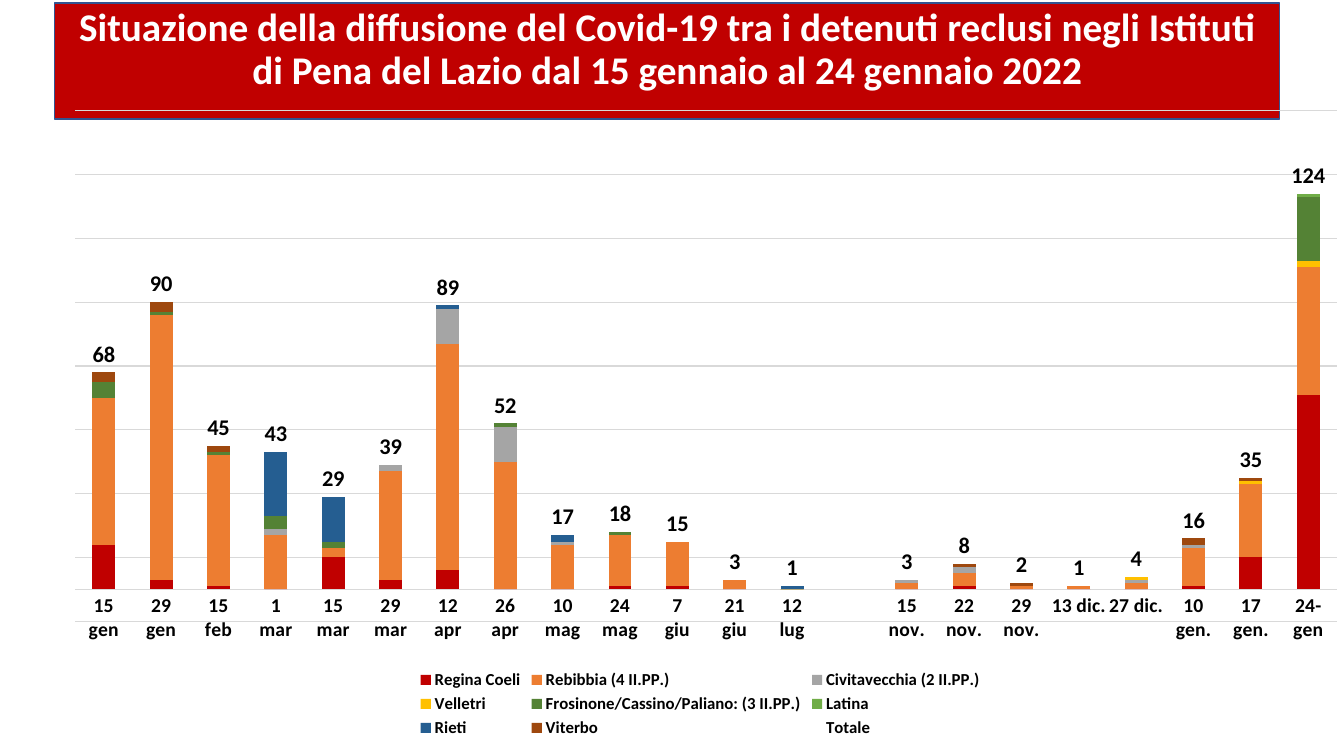
from lxml import etree
from pptx import Presentation
from pptx.chart.data import CategoryChartData
from pptx.dml.color import RGBColor
from pptx.enum.chart import (XL_CHART_TYPE, XL_LABEL_POSITION,
                             XL_LEGEND_POSITION, XL_TICK_MARK)
from pptx.enum.shapes import MSO_SHAPE
from pptx.enum.text import MSO_ANCHOR, PP_ALIGN
from pptx.oxml.ns import qn
from pptx.util import Inches, Pt

STACKED = XL_CHART_TYPE.COLUMN_STACKED
BASE = XL_LABEL_POSITION.INSIDE_BASE
BOTTOM = XL_LEGEND_POSITION.BOTTOM
NO_TICK = XL_TICK_MARK.NONE
RECT = MSO_SHAPE.RECTANGLE
TOP = MSO_ANCHOR.TOP
CENTER = PP_ALIGN.CENTER

FONT = "Calibri"
RED, BLACK, WHITE, GRAY = "C00000", "000000", "FFFFFF", "D9D9D9"
TITLE = ("Situazione della diffusione del Covid-19 tra i detenuti reclusi negli "
         "Istituti di Pena del Lazio dal 15 gennaio al 24 gennaio 2022")
TITLE_BOX = (0.54, 0.03, 12.15, 1.15)
CHART_BOX = (0.54, 0.97, 12.81, 6.39)
PLOT = {"x": 0.016, "y": 0.02, "w": 0.977, "h": 0.793}

DATES = ["15\ngen", "29\ngen", "15\nfeb", "1\nmar", "15\nmar", "29\nmar",
         "12\napr", "26\napr", "10\nmag", "24\nmag", "7\ngiu", "21\ngiu",
         "12\nlug", "", "15 nov.", "22 nov.", "29 nov.", "13 dic.",
         "27 dic.", "10 gen.", "17 gen.", "24-gen"]
TOTAL = "Totale"
SERIES = [
    ("Regina Coeli", RED,
     [14, 3, 1, 0, 10, 3, 6, 0, 0, 1, 1, 0, 0, None, 0, 1, 0, 0, 0, 1, 10, 61]),
    ("Rebibbia (4 II.PP.)", "ED7D31",
     [46, 83, 41, 17, 3, 34, 71, 40, 14, 16, 14, 3, 0, None, 2, 4, 1, 1, 2, 12, 23, 40]),
    ("Civitavecchia (2 II.PP.)", "A5A5A5",
     [0, 0, 0, 2, 0, 2, 11, 11, 1, 0, 0, 0, 0, None, 1, 2, 0, None, 1, 1, 0, 0]),
    ("Velletri", "FFC000",
     [0, 0, 0, 0, 0, 0, 0, 0, 0, 0, 0, 0, 0, None, 0, 0, 0, 0, 1, 0, 1, 2]),
    ("Frosinone/Cassino/Paliano: (3 II.PP.)", "548235",
     [5, 1, 1, 4, 2, 0, 0, 1, 0, 1, 0, 0, 0, None, 0, 0, 0, 0, 0, 0, 0, 20]),
    ("Latina", "70AD47",
     [0, 0, 0, 0, 0, 0, 0, 0, 0, 0, 0, 0, 0, None, 0, 0, 0, 0, 0, 0, 0, 1]),
    ("Rieti", "255E91",
     [0, 0, 0, 20, 14, 0, 1, 0, 2, 0, 0, 0, 1, None, 0, 0, 0, 0, 0, 0, 0, 0]),
    ("Viterbo", "9E480E",
     [3, 3, 2, 0, 0, 0, 0, 0, 0, 0, 0, 0, 0, None, 0, 1, 1, 0, 0, 2, 1, 0]),
    (TOTAL, None,
     [68, 90, 45, 43, 29, 39, 89, 52, 17, 18, 15, 3, 1, None, 3, 8, 2, 1, 4, 16, 35, 124]),
]


def color(code):
    return RGBColor.from_string(code)


def style(font, size, code=BLACK, bold=True):
    font.name, font.size, font.bold = FONT, Pt(size), bold
    font.color.rgb = color(code)


def stroke(line, code, width):
    line.color.rgb = color(code)
    line.width = Pt(width)


def write(shape, text, size, code, align, anchor, spacing):
    frame = shape.text_frame
    frame.word_wrap = True
    frame.vertical_anchor = anchor
    para = frame.paragraphs[0]
    para.alignment = align
    para.line_spacing = spacing
    para.space_before = Pt(10)
    run = para.add_run()
    run.text = text
    style(run.font, size, code)


def place(plot):
    """Fix the inner plot area at the fractions in PLOT."""
    area = plot._element.getparent()
    for old in area.findall(qn("c:layout")):
        area.remove(old)
    layout = etree.Element(qn("c:layout"))
    manual = etree.SubElement(layout, qn("c:manualLayout"))
    rules = {"layoutTarget": "inner", "xMode": "edge", "yMode": "edge", **PLOT}
    for tag, val in rules.items():
        etree.SubElement(manual, qn("c:" + tag)).set("val", str(val))
    area.insert(0, layout)


def add_title(slide):
    box = slide.shapes.add_shape(RECT, *map(Inches, TITLE_BOX))
    box.shadow.inherit = False
    box.fill.solid()
    box.fill.fore_color.rgb = color(RED)
    stroke(box.line, "325491", 1)
    write(box, TITLE, size=28, code=WHITE, align=CENTER, anchor=TOP, spacing=0.9)


def add_cases(slide):
    data = CategoryChartData()
    data.categories = DATES
    for name, _, vals in SERIES:
        data.add_series(name, vals)
    chart = slide.shapes.add_chart(STACKED, *map(Inches, CHART_BOX), data).chart
    chart.has_title = False
    style(chart.font, 10, bold=False)

    plot = chart.plots[0]
    plot.gap_width, plot.overlap = 150, 100
    plot.vary_by_categories = False
    place(plot)
    for bars, (name, code, _) in zip(plot.series, SERIES):
        bars.invert_if_negative = False
        if code:
            bars.format.fill.solid()
            bars.format.fill.fore_color.rgb = color(code)
        else:
            bars.format.fill.background()
        if name == TOTAL:
            labels = bars.data_labels
            labels.show_value = True
            labels.position = BASE
            style(labels.font, 16)

    dates = chart.category_axis
    dates.major_tick_mark = dates.minor_tick_mark = NO_TICK
    style(dates.tick_labels.font, 14)
    stroke(dates.format.line, GRAY, 0.75)

    cases = chart.value_axis
    cases.minimum_scale, cases.maximum_scale = -10, 150
    cases.major_unit = 20
    cases.has_major_gridlines = True
    stroke(cases.major_gridlines.format.line, GRAY, 0.75)
    cases.visible = False

    chart.has_legend = True
    chart.legend.position = BOTTOM
    chart.legend.include_in_layout = False
    style(chart.legend.font, 12)


def main():
    deck = Presentation()
    deck.slide_width, deck.slide_height = Inches(13.33), Inches(7.5)
    slide = deck.slides.add_slide(deck.slide_layouts[6])
    add_title(slide)
    add_cases(slide)
    deck.save("out.pptx")


if __name__ == "__main__":
    main()
